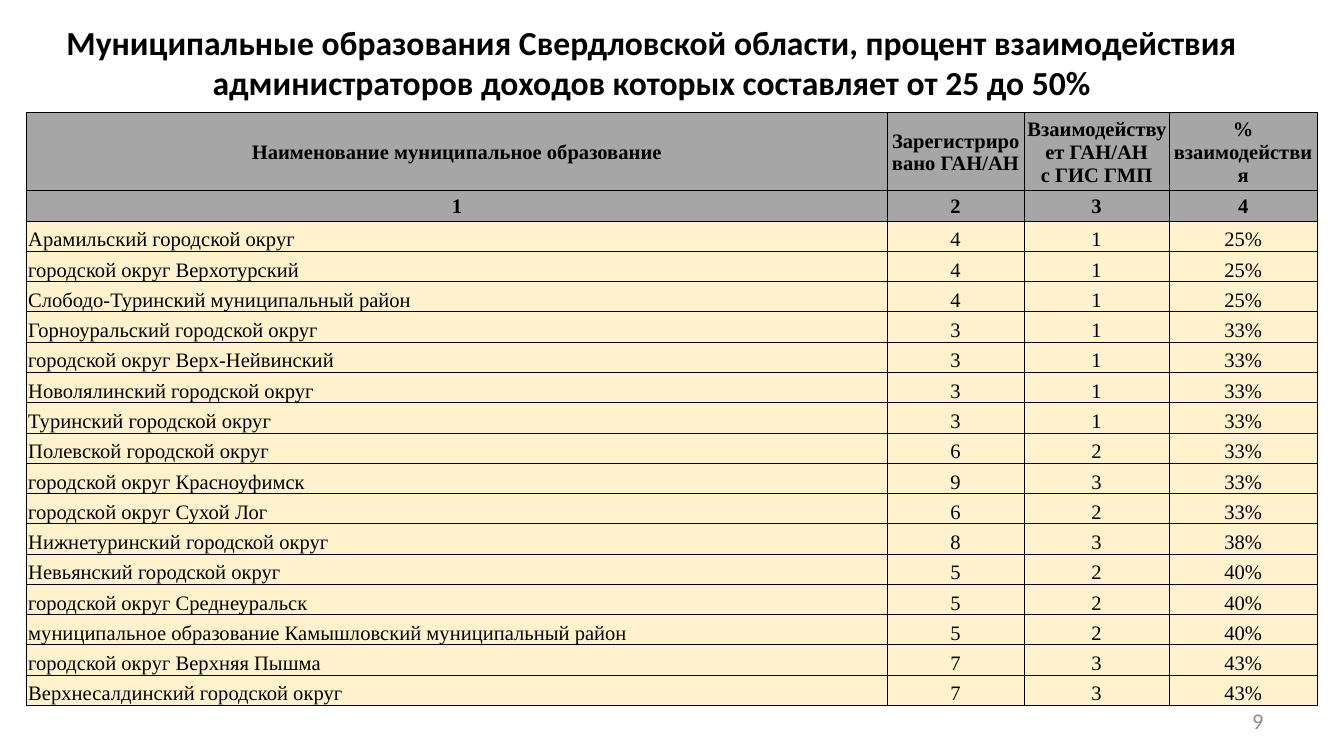
from lxml.etree import SubElement
from pptx import Presentation
from pptx.dml.color import RGBColor
from pptx.enum.text import MSO_ANCHOR as Anchor, PP_ALIGN as Align
from pptx.oxml.ns import qn
from pptx.util import Inches, Pt

BLACK = RGBColor(0x00, 0x00, 0x00)
GREY = RGBColor(0x8C, 0x8C, 0x8C)
HEADER_FILL = RGBColor(0xA6, 0xA6, 0xA6)
BODY_FILL = RGBColor(0xFF, 0xF2, 0xCC)

WIDTH = Inches(10)
HEIGHT = WIDTH * 9 // 16
TITLE_BOX = (Inches(0.35), Inches(-0.01), Inches(9), Inches(0.94))
TABLE_BOX = (Inches(0.2), Inches(0.84), Inches(9.6), Inches(4.41))
NUMBER_BOX = (Inches(7.17), Inches(5.21), Inches(2.33), Inches(0.3))
COLUMN_WIDTHS = (6.4, 1.02, 1.08, 1.1)
HEADER_HEIGHT = Inches(0.58)

TITLE = (
    "Муниципальные образования Свердловской области, процент взаимодействия "
    "администраторов доходов которых составляет от 25 до 50%"
)
HEADINGS = (
    "Наименование муниципальное образование",
    "Зарегистрировано ГАН/АН",
    "Взаимодействует ГАН/АН\nс ГИС ГМП",
    "% взаимодействия",
)
MUNICIPALITIES = (
    ("Арамильский городской округ", 4, 1),
    ("городской округ Верхотурский", 4, 1),
    ("Слободо-Туринский муниципальный район", 4, 1),
    ("Горноуральский городской округ", 3, 1),
    ("городской округ Верх-Нейвинский", 3, 1),
    ("Новолялинский городской округ", 3, 1),
    ("Туринский городской округ", 3, 1),
    ("Полевской городской округ", 6, 2),
    ("городской округ Красноуфимск", 9, 3),
    ("городской округ Сухой Лог", 6, 2),
    ("Нижнетуринский городской округ", 8, 3),
    ("Невьянский городской округ", 5, 2),
    ("городской округ Среднеуральск", 5, 2),
    ("муниципальное образование Камышловский муниципальный район", 5, 2),
    ("городской округ Верхняя Пышма", 7, 3),
    ("Верхнесалдинский городской округ", 7, 3),
)


def place(shape, box):
    shape.left, shape.top, shape.width, shape.height = box


def write(frame, text, align, font, size, color, bold=False):
    para = frame.paragraphs[0]
    para.alignment = align
    for index, line in enumerate(text.split("\n")):
        if index:
            para.add_line_break()
        span = para.add_run()
        span.text = line
        span.font.name = font
        span.font.size = Pt(size)
        span.font.bold = bold
        span.font.color.rgb = color


def add_borders(cell):
    properties = cell._tc.get_or_add_tcPr()
    for index, side in enumerate(("lnL", "lnR", "lnT", "lnB")):
        line = properties.makeelement(qn(f"a:{side}"), {"w": str(Pt(0.5))})
        fill = SubElement(line, qn("a:solidFill"))
        SubElement(fill, qn("a:srgbClr"), val=str(BLACK))
        properties.insert(index, line)


def fill_cell(cell, text, align, is_header):
    cell.margin_left = cell.margin_right = cell.margin_top = Inches(0.01)
    cell.margin_bottom = 0
    cell.vertical_anchor = Anchor.MIDDLE if is_header else Anchor.BOTTOM
    cell.fill.solid()
    cell.fill.fore_color.rgb = HEADER_FILL if is_header else BODY_FILL
    write(cell.text_frame, text, align, "Times New Roman", 11, BLACK, is_header)
    add_borders(cell)


def add_title(page, box):
    title = page.shapes.title
    place(title, box)
    title.text_frame.word_wrap = True
    title.text_frame.vertical_anchor = Anchor.MIDDLE
    write(title.text_frame, TITLE, Align.CENTER, "Calibri", 18, BLACK, True)


def add_municipality_table(page, box):
    numbering = [str(number + 1) for number in range(len(HEADINGS))]
    body = [
        (name, str(registered), str(active), f"{active / registered:.0%}")
        for name, registered, active in MUNICIPALITIES
    ]
    rows = [HEADINGS, numbering, *body]
    table = page.shapes.add_table(len(rows), len(HEADINGS), *box).table
    for column, width in zip(table.columns, COLUMN_WIDTHS):
        column.width = Inches(width)
    row_height = (box[3] - HEADER_HEIGHT) // (len(rows) - 1)
    for row_index, values in enumerate(rows):
        table.rows[row_index].height = row_height if row_index else HEADER_HEIGHT
        is_header = row_index < 2
        for column_index, text in enumerate(values):
            centred = is_header or column_index > 0
            align = Align.CENTER if centred else Align.LEFT
            fill_cell(table.cell(row_index, column_index), text, align, is_header)


def add_page_number(page, box):
    frame = page.shapes.add_textbox(*box).text_frame
    frame.word_wrap = True
    frame.vertical_anchor = Anchor.MIDDLE
    write(frame, "9", Align.RIGHT, "Calibri", 12, GREY)


def main():
    deck = Presentation()
    deck.slide_width, deck.slide_height = WIDTH, HEIGHT
    page = deck.slides.add_slide(deck.slide_layouts[5])
    add_title(page, TITLE_BOX)
    add_municipality_table(page, TABLE_BOX)
    add_page_number(page, NUMBER_BOX)
    deck.save("out.pptx")


if __name__ == "__main__":
    main()
